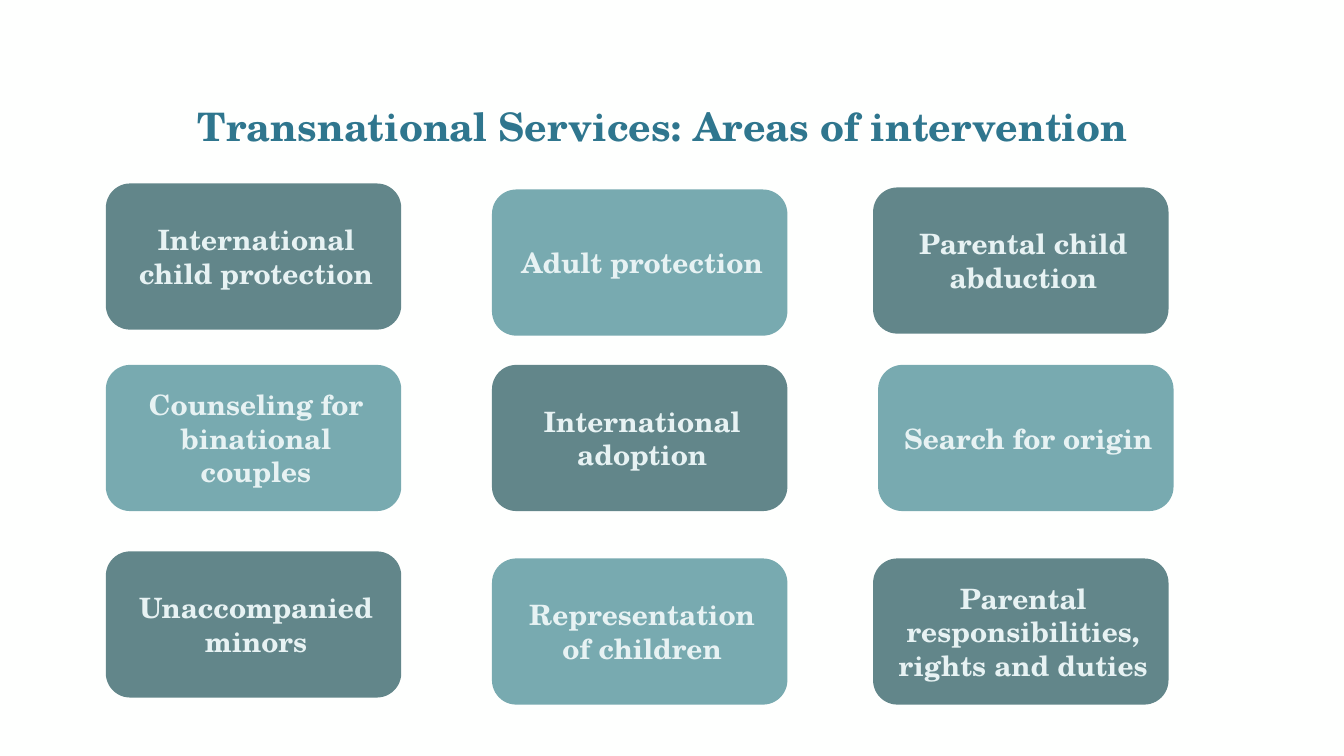
import pptx
import pptx.util
import pptx.dml.color
import pptx.enum.shapes
import pptx.enum.text
from pptx.util import Inches

Align = pptx.enum.text.PP_ALIGN
Anchor = pptx.enum.text.MSO_ANCHOR


def tint(code):
    return pptx.dml.color.RGBColor.from_string(code)


class Deck:
    font = "TeX Gyre Schola"
    paper, ink, pale = "FEFFFE", "2F768E", "E7F2F3"
    fills = ("62868A", "78AAB0")

    def __init__(self):
        self.prs = pptx.Presentation()
        self.prs.slide_width = Inches(13.33)
        self.prs.slide_height = Inches(7.5)
        self.slide = self.prs.slides.add_slide(self.prs.slide_layouts[5])
        back = self.slide.background.fill
        back.solid()
        back.fore_color.rgb = tint(self.paper)

    def label(self, frame, text, size, color, align, anchor):
        frame.word_wrap = True
        frame.auto_size = pptx.enum.text.MSO_AUTO_SIZE.NONE
        frame.vertical_anchor = anchor
        para = frame.paragraphs[0]
        para.alignment = align
        run = para.add_run()
        run.text = text
        run.font.name = self.font
        run.font.size = pptx.util.Pt(size)
        run.font.bold = True
        run.font.color.rgb = tint(color)
        return para

    def title(self, text, left, top, width, height):
        head = self.slide.shapes.title
        head.left, head.top = Inches(left), Inches(top)
        head.width, head.height = Inches(width), Inches(height)
        self.label(head.text_frame, text, 28, self.ink, Align.LEFT, Anchor.TOP)

    def card(self, text, left, top, fill):
        box = self.slide.shapes.add_shape(
            pptx.enum.shapes.MSO_SHAPE.ROUNDED_RECTANGLE,
            Inches(left), Inches(top), Inches(2.93), Inches(1.45))
        box.shadow.inherit = False
        box.fill.solid()
        box.fill.fore_color.rgb = tint(fill)
        box.line.fill.background()
        para = self.label(box.text_frame, text, 20, self.pale,
                          Align.CENTER, Anchor.MIDDLE)
        para.level = 1
        props = para._p.get_or_add_pPr()
        props.set("marL", str(Inches(0.05)))
        props.set("indent", "0")


def main():
    deck = Deck()

    # Heading
    deck.title("Transnational Services: Areas of intervention",
               1.86, 0.96, 10.15, 0.57)

    # Areas: text, left, top; fills alternate like a chessboard
    areas = [
        ("International child protection", 1.05, 1.82),
        ("Adult protection", 4.88, 1.88),
        ("Parental child abduction", 8.66, 1.86),
        ("Counseling for binational couples", 1.05, 3.62),
        ("International adoption", 4.88, 3.62),
        ("Search for origin", 8.71, 3.62),
        ("Unaccompanied minors", 1.05, 5.47),
        ("Representation of children", 4.88, 5.54),
        ("Parental responsibilities, rights and duties", 8.66, 5.54),
    ]
    for index, (text, left, top) in enumerate(areas):
        deck.card(text, left, top, deck.fills[index % 2])

    deck.prs.save("out.pptx")


if __name__ == "__main__":
    main()
